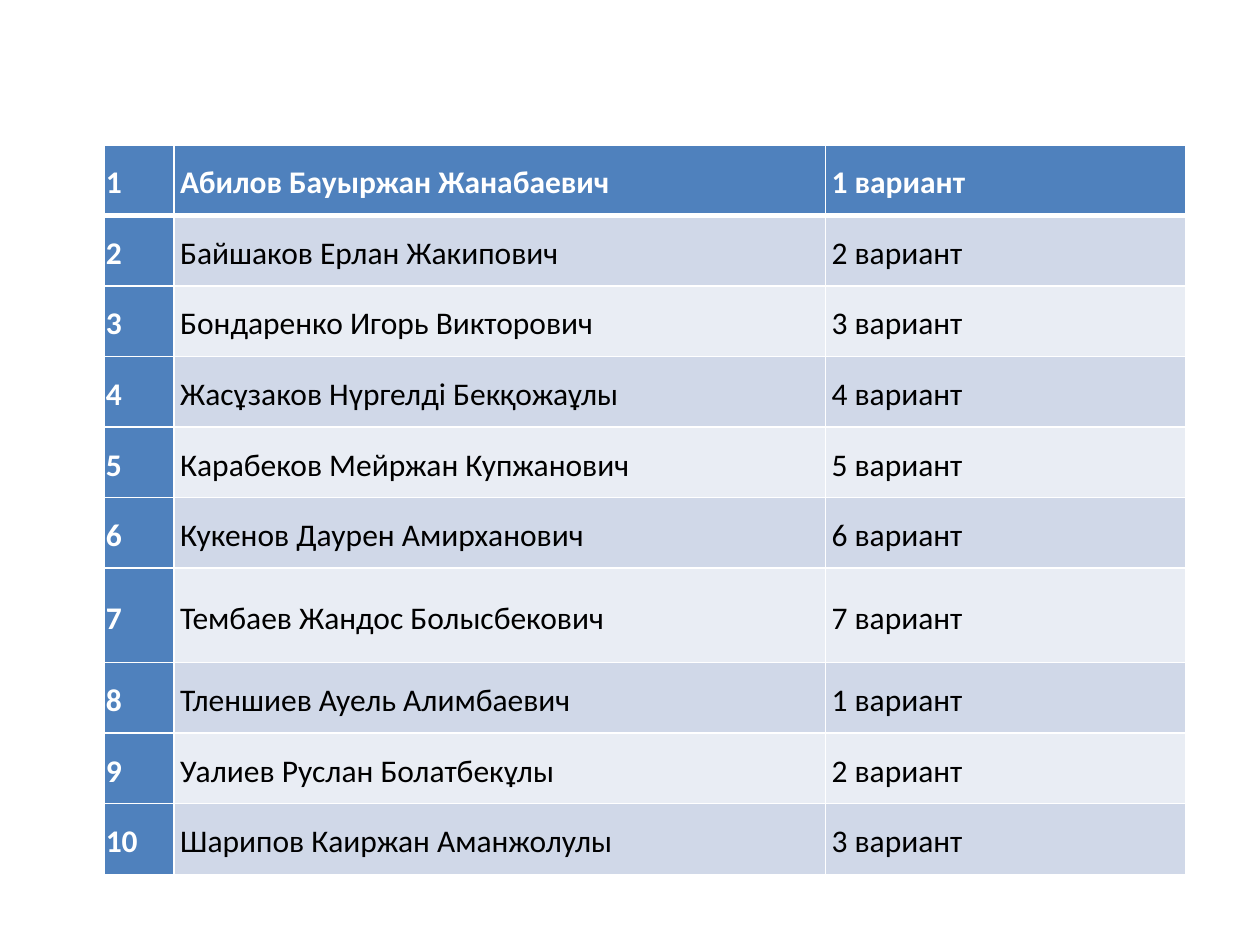
"""Builds a slide with a table that assigns a task variant to each student."""
import lxml.etree
import pptx
import pptx.dml.color
import pptx.enum.text
import pptx.oxml.ns
import pptx.util

Inches = pptx.util.Inches
Pt = pptx.util.Pt

COLORS = {
    "accent": "4F81BD",
    "band_dark": "D0D8E8",
    "band_light": "E9EDF4",
    "white": "FFFFFF",
    "black": "000000",
}
STUDENTS = [
    "Абилов Бауыржан Жанабаевич",
    "Байшаков Ерлан Жакипович",
    "Бондаренко Игорь Викторович",
    "Жасұзаков Нүргелді Бекқожаұлы",
    "Карабеков Мейржан Купжанович",
    "Кукенов Даурен Амирханович",
    "Тембаев Жандос Болысбекович",
    "Тленшиев Ауель Алимбаевич",
    "Уалиев Руслан Болатбекұлы",
    "Шарипов Каиржан Аманжолулы",
]
VARIANT_COUNT = 7
COLUMN_WIDTHS = [0.55, 5.17, 2.86]
ROW_HEIGHT = 0.56
TALL_ROW, TALL_ROW_HEIGHT = 6, 0.75


class SlideBuilder:
    def __init__(self, slide, font_name="Calibri", font_size=18):
        self.slide = slide
        self.font_name = font_name
        self.font_size = font_size

    def color(self, name):
        return pptx.dml.color.RGBColor.from_string(COLORS[name])

    def border(self, cell, side, width):
        properties = cell._tc.get_or_add_tcPr()
        qn = pptx.oxml.ns.qn
        line = lxml.etree.SubElement(properties, qn(f"a:ln{side}"), w=str(Pt(width)))
        fill = lxml.etree.SubElement(line, qn("a:solidFill"))
        lxml.etree.SubElement(fill, qn("a:srgbClr"), val=COLORS["white"])

    def cell(self, cell, text, row, column):
        emphasized = row == 0 or column == 0
        band = "band_dark" if row % 2 else "band_light"
        for side in "LRTB":
            heavy = (row == 0 and side == "B") or (row == 1 and side == "T")
            self.border(cell, side, 3 if heavy else 1)
        cell.fill.solid()
        cell.fill.fore_color.rgb = self.color("accent" if emphasized else band)
        cell.vertical_anchor = pptx.enum.text.MSO_ANCHOR.MIDDLE
        cell.margin_left = Inches(0.05 if column else 0.01)
        cell.margin_right = cell.margin_top = cell.margin_bottom = Inches(0.01)
        cell.text = text
        paragraph = cell.text_frame.paragraphs[0]
        paragraph.line_spacing = 1.15
        if column == 1:
            paragraph.space_after = Pt(10)
        paragraph.font.name = self.font_name
        paragraph.font.size = Pt(self.font_size)
        paragraph.font.bold = emphasized
        paragraph.font.color.rgb = self.color("white" if emphasized else "black")

    def table(self, left, top, column_widths, row_heights, rows):
        frame = self.slide.shapes.add_table(
            len(rows), len(column_widths), Inches(left), Inches(top),
            Inches(sum(column_widths)), Inches(sum(row_heights)))
        table = frame.table
        for column, width in zip(table.columns, column_widths):
            column.width = Inches(width)
        for row, height in zip(table.rows, row_heights):
            row.height = Inches(height)
        for row, texts in enumerate(rows):
            for column, text in enumerate(texts):
                self.cell(table.cell(row, column), text, row, column)


def main():
    presentation = pptx.Presentation()
    presentation.slide_width = Inches(10)
    presentation.slide_height = Inches(7.5)
    builder = SlideBuilder(presentation.slides.add_slide(presentation.slide_layouts[6]))
    rows = [
        (str(index + 1), student, f"{index % VARIANT_COUNT + 1} вариант")
        for index, student in enumerate(STUDENTS)
    ]
    row_heights = [ROW_HEIGHT] * len(rows)
    row_heights[TALL_ROW] = TALL_ROW_HEIGHT
    builder.table(0.83, 1.15, COLUMN_WIDTHS, row_heights, rows)
    presentation.save("out.pptx")


if __name__ == "__main__":
    main()
